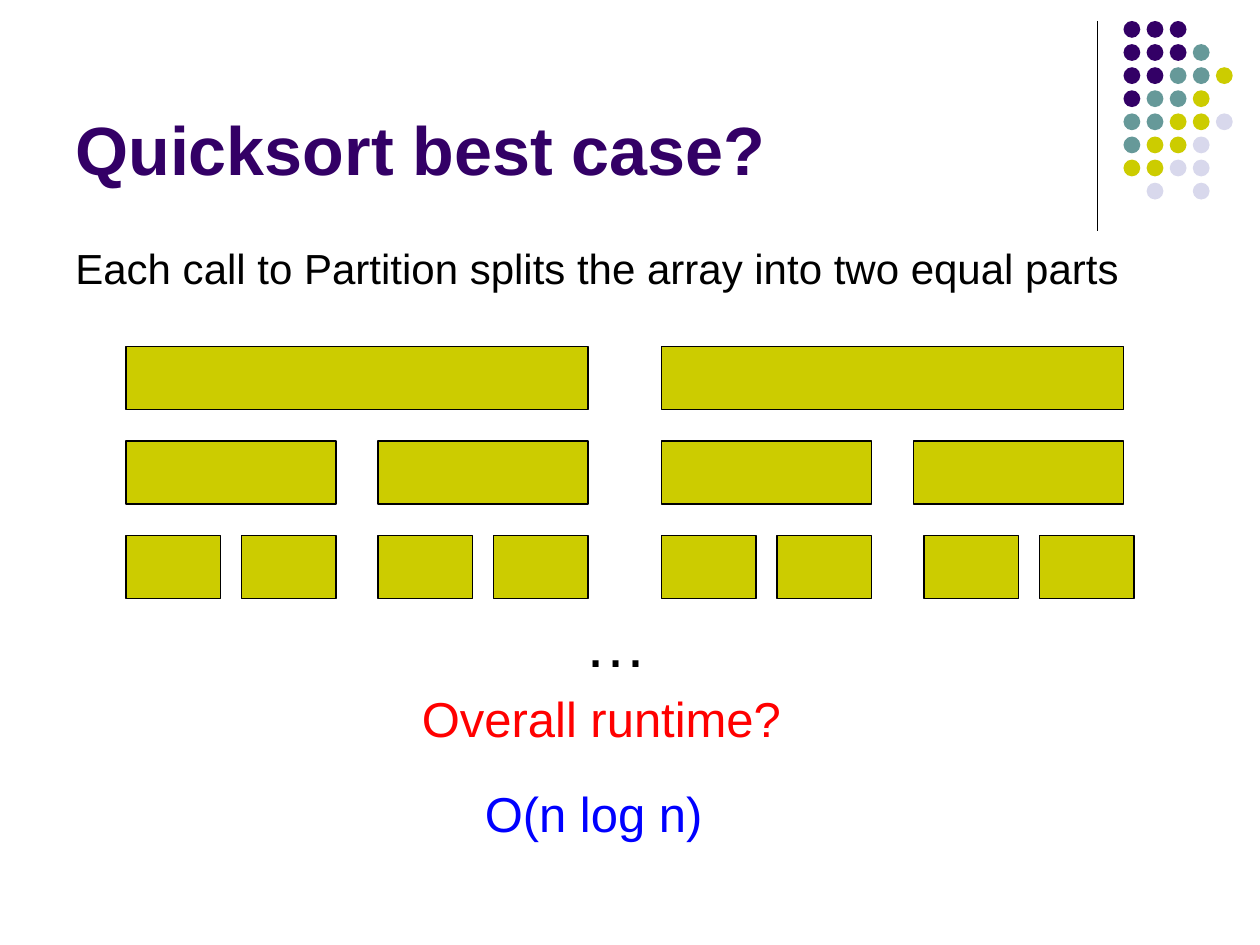
from pptx import Presentation
from pptx.dml.color import RGBColor
from pptx.enum.shapes import MSO_CONNECTOR, MSO_SHAPE as SHAPE
from pptx.enum.text import MSO_ANCHOR as ANCHOR
from pptx.oxml.ns import qn
from pptx.util import Inches, Pt
from lxml.etree import SubElement

PURPLE = RGBColor(0x33, 0x00, 0x66)
TEAL = RGBColor(0x66, 0x99, 0x99)
OLIVE = RGBColor(0xCC, 0xCC, 0x00)
LAVENDER = RGBColor(0xD8, 0xD8, 0xEC)
BLACK = RGBColor(0x00, 0x00, 0x00)
RED = RGBColor(0xFF, 0x00, 0x00)
BLUE = RGBColor(0x00, 0x00, 0xFF)

prs = Presentation()
prs.slide_width, prs.slide_height = Inches(10), Inches(7.5)
s = prs.slides.add_slide(prs.slide_layouts[6])

# Grid of 120 columns by 90 rows, with square cells
CELL = prs.slide_width / 120


def grid(*cells):
    return [round(c * CELL) for c in cells]


def add_text(text, box, size, color, bold=False, wrap=True):
    tf = s.shapes.add_textbox(*grid(*box)).text_frame
    tf.word_wrap = wrap
    p = tf.paragraphs[0]
    p.text = text
    p.font.name, p.font.size, p.font.bold = "Arial", Pt(size), bold
    p.font.color.rgb = color
    return tf


# Corner ornament: vertical rule and dots
rule = s.shapes.add_connector(MSO_CONNECTOR.STRAIGHT, *grid(104.5, 2, 104.5, 22))
rule.line.color.rgb, rule.line.width = BLACK, Pt(0.75)
SubElement(rule._element.spPr, qn("a:effectLst"))

DOT_COLORS = {"P": PURPLE, "T": TEAL, "O": OLIVE, "L": LAVENDER}
DOT_ROWS = ["PPP", "PPPT", "PPTTO", "PTTO", "TTOOL", "TOOL", "OOLL", " L L"]
DOT_SIZE, DOT_STEP = 1.6, 2.2
for row, dots in enumerate(DOT_ROWS):
    for col, key in enumerate(dots):
        if key in DOT_COLORS:
            dot = s.shapes.add_shape(SHAPE.OVAL, *grid(
                107 + col * DOT_STEP, 2 + row * DOT_STEP, DOT_SIZE, DOT_SIZE))
            dot.shadow.inherit = False
            dot.fill.solid()
            dot.fill.fore_color.rgb = DOT_COLORS[key]
            dot.line.fill.background()

# Title and statement
tf = add_text("Quicksort best case?", (6, 1.6, 99, 17), 39, PURPLE, bold=True)
tf.vertical_anchor = ANCHOR.BOTTOM
tf = add_text("Each call to Partition splits the array into two equal parts",
              (6, 22.5, 109, 8.4), 24, BLACK)
tf.paragraphs[0].space_before = Pt(4.8)

# Array parts after each split: width and left columns per level
LEVELS = [
    (44, [12, 63]),
    (20, [12, 36, 63, 87]),
    (9, [12, 23, 36, 47, 63, 74, 88, 99]),
]
for level, (width, lefts) in enumerate(LEVELS):
    for left in lefts:
        part = s.shapes.add_shape(SHAPE.RECTANGLE,
                                  *grid(left, 33 + 9 * level, width, 6))
        part.shadow.inherit = False
        part.fill.solid()
        part.fill.fore_color.rgb = OLIVE
        part.line.color.rgb, part.line.width = BLACK, Pt(0.75)

# Continuation, question and answer
add_text("…", (54.5, 57, 8.5, 8.5), 36, BLACK, wrap=False)
add_text("Overall runtime?", (39, 65, 70, 6.8), 28, RED)
add_text("O(n log n)", (45, 74, 29, 6.8), 28, BLUE)

prs.save("out.pptx")
